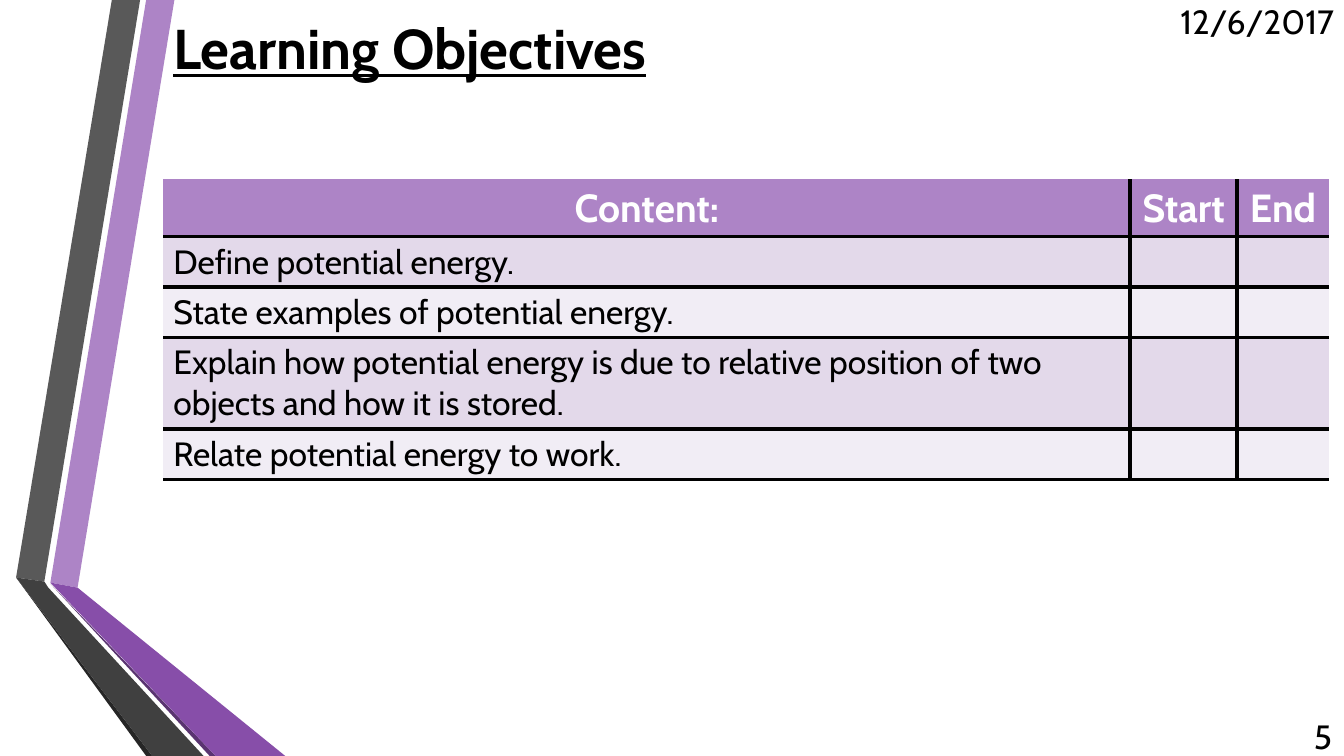
"""Build the Learning Objectives slide with its ribbon and objectives table."""
from pptx import Presentation
from pptx import util as u
from pptx.dml.color import RGBColor
from pptx.enum import text
from pptx.oxml import parse_xml
from pptx.oxml.ns import nsdecls, qn

PX = 9144
FONT = "Cabin"
BLACK = RGBColor(0x00, 0x00, 0x00)
WHITE = RGBColor(0xFF, 0xFF, 0xFF)
LILAC = RGBColor(0xAD, 0x84, 0xC6)
PURPLE = RGBColor(0x87, 0x4E, 0xA9)
DEEP_PURPLE = RGBColor(0x5A, 0x34, 0x71)
GREY = RGBColor(0x59, 0x59, 0x59)
DARK_GREY = RGBColor(0x40, 0x40, 0x40)
CHARCOAL = RGBColor(0x26, 0x26, 0x26)
DARK_BAND = RGBColor(0xE3, 0xD9, 0xEA)
LIGHT_BAND = RGBColor(0xF1, 0xED, 0xF5)
NO_STYLE = "{2D5ABB26-0587-4C30-8999-92F81FD0307C}"


def write(text_frame, words, size, color, align, bold=False, underline=False):
    text_frame.text = words
    paragraph = text_frame.paragraphs[0]
    paragraph.alignment = align
    font = paragraph.runs[0].font if words else paragraph.font
    font.name = FONT
    font.size = u.Pt(size)
    font.bold = bold
    font.underline = underline
    font.color.rgb = color


def add_border(cell, side):
    properties = cell._tc.get_or_add_tcPr()
    line = parse_xml(
        f'<a:{side} {nsdecls("a")} w="{u.Pt(3)}"><a:solidFill>'
        f'<a:srgbClr val="{BLACK}"/></a:solidFill></a:{side}>'
    )
    fill = properties.find(qn("a:solidFill"))
    fill.addprevious(line)


presentation = Presentation()
presentation.slide_width = 1333 * PX
presentation.slide_height = 750 * PX
slide = presentation.slides.add_slide(presentation.slide_layouts[6])

ribbon = [
    (LILAC, [(50, 578), (77, 583), (173, 0), (145, 0)]),
    (GREY, [(139, 0), (111, 0), (16, 573), (44, 577)]),
    (CHARCOAL, [(16, 573), (145, 750), (151, 750)]),
    (DEEP_PURPLE, [(50, 579), (208, 750), (214, 750)]),
    (PURPLE, [(50, 578), (214, 750), (283, 750), (77, 583)]),
    (DARK_GREY, [(202, 750), (48, 583), (44, 577), (16, 573), (151, 750)]),
]
for color, points in ribbon:
    builder = slide.shapes.build_freeform(*points[0], scale=PX)
    builder.add_line_segments(points[1:], close=True)
    shape = builder.convert_to_shape()
    shape.shadow.inherit = False
    shape.fill.solid()
    shape.fill.fore_color.rgb = color
    shape.line.fill.background()

LEFT, CENTER, RIGHT = text.PP_ALIGN.LEFT, text.PP_ALIGN.CENTER, text.PP_ALIGN.RIGHT
labels = [
    ("Learning Objectives", (162, 1, 1096, 92), 40, LEFT, True),
    ("12/6/2017", (1129, 1, 204, 40), 24, RIGHT, False),
    ("5", (1258, 710, 73, 40), 24, RIGHT, False),
]
for words, box, size, align, is_title in labels:
    text_frame = slide.shapes.add_textbox(*(n * PX for n in box)).text_frame
    text_frame.word_wrap = True
    text_frame.vertical_anchor = text.MSO_ANCHOR.MIDDLE
    text_frame.margin_top = text_frame.margin_bottom = 0
    write(text_frame, words, size, BLACK, align, bold=is_title, underline=is_title)

rows = [
    ("Content:", "Start", "End"),
    ("Define potential energy.", "", ""),
    ("State examples of potential energy.", "", ""),
    ("Explain how potential energy is due to relative position of two "
     "objects and how it is stored.", "", ""),
    ("Relate potential energy to work.", "", ""),
]
column_widths = [959, 106, 91]
row_heights = [56, 50, 50, 91, 50]
frame = slide.shapes.add_table(
    len(rows), len(column_widths), 162 * PX, 178 * PX,
    sum(column_widths) * PX, sum(row_heights) * PX,
)
table = frame.table
table.horz_banding = False
table._tbl.tblPr.find(qn("a:tableStyleId")).text = NO_STYLE
for column, width in zip(table.columns, column_widths):
    column.width = width * PX
for row, height in zip(table.rows, row_heights):
    row.height = height * PX

last_column = len(column_widths) - 1
for r, row in enumerate(rows):
    is_header = r == 0
    band = LILAC if is_header else DARK_BAND if r % 2 else LIGHT_BAND
    for c, words in enumerate(row):
        cell = table.cell(r, c)
        cell.fill.solid()
        cell.fill.fore_color.rgb = band
        if is_header:
            cell.vertical_anchor = text.MSO_ANCHOR.MIDDLE
            write(cell.text_frame, words, 28, WHITE, CENTER, bold=True)
        else:
            write(cell.text_frame, words, 24, BLACK, LEFT)
        if c > 0:
            add_border(cell, "lnL")
        if c < last_column:
            add_border(cell, "lnR")
        if not is_header:
            add_border(cell, "lnT")
        add_border(cell, "lnB")

presentation.save("out.pptx")
